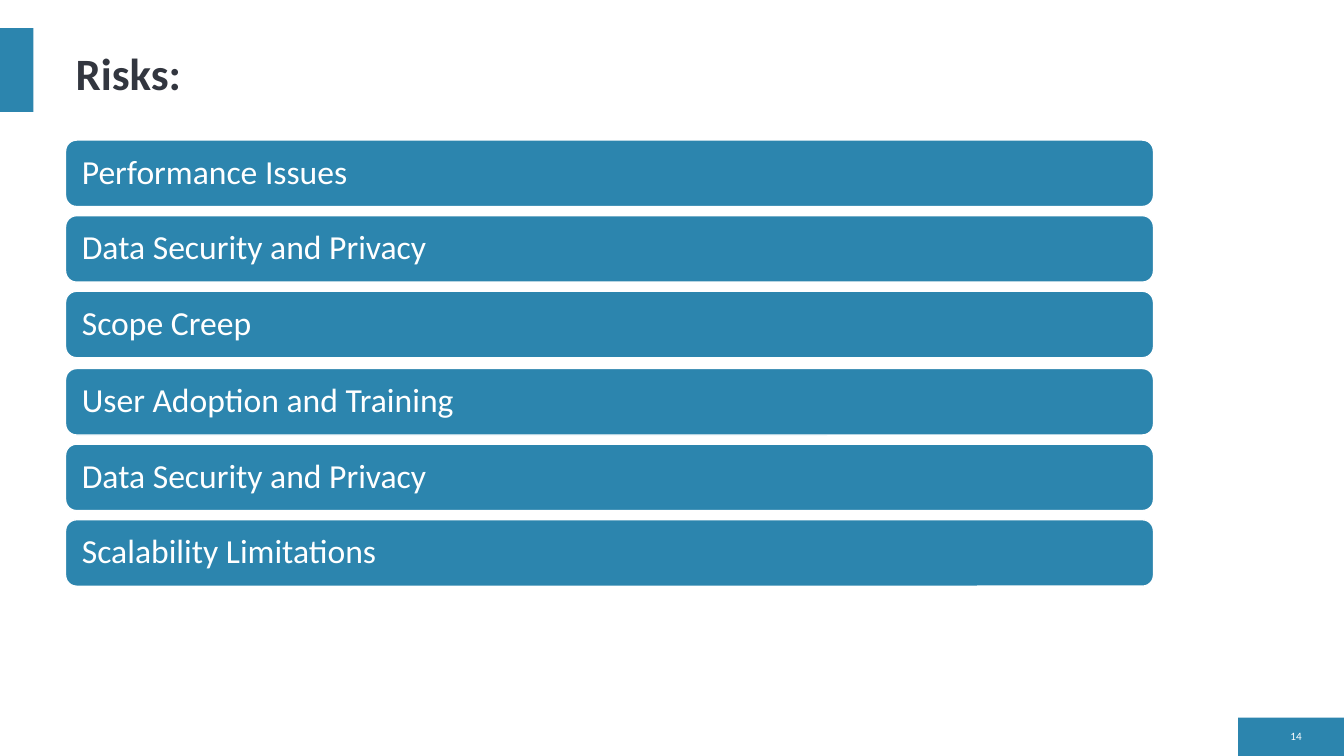
from dataclasses import dataclass

from pptx import Presentation
from pptx import util as u
from pptx.dml.color import RGBColor
from pptx.enum import shapes, text

COLORS = {"blue": "2C85AE", "ink": "32363F", "white": "FFFFFF"}
FONT = "Calibri"
SLIDE_W, SLIDE_H = u.Inches(13.33), u.Inches(7.5)
RISK_GROUPS = (
    ("Performance Issues", "Data Security and Privacy", "Scope Creep"),
    ("User Adoption and Training", "Data Security and Privacy", "Scalability Limitations"),
)
GROUP_TOPS = (18.53, 48.75)
BAR_PITCH = 10


@dataclass(frozen=True)
class Box:
    """A rectangle in percent of the slide's width and height."""
    left: float
    top: float
    width: float
    height: float

    def emu(self) -> tuple[int, int, int, int]:
        return (int(SLIDE_W * self.left / 100), int(SLIDE_H * self.top / 100),
                int(SLIDE_W * self.width / 100), int(SLIDE_H * self.height / 100))


@dataclass(frozen=True)
class TextStyle:
    size: float
    color: str
    bold: bool = False
    align: text.PP_ALIGN = text.PP_ALIGN.LEFT
    anchor: text.MSO_ANCHOR = text.MSO_ANCHOR.MIDDLE


TITLE = TextStyle(32, "ink", bold=True, anchor=text.MSO_ANCHOR.BOTTOM)
RISK = TextStyle(24, "white")
NUMBER = TextStyle(8, "white", align=text.PP_ALIGN.RIGHT)


def rgb(name: str) -> RGBColor:
    return RGBColor.from_string(COLORS[name])


def write(sp, words: str, style: TextStyle) -> None:
    tf = sp.text_frame
    tf.text = words
    tf.word_wrap = True
    tf.auto_size = text.MSO_AUTO_SIZE.NONE
    tf.vertical_anchor = style.anchor
    p = tf.paragraphs[0]
    p.alignment = style.align
    p.line_spacing = 0.9
    font = p.runs[0].font
    font.name, font.size, font.bold = FONT, u.Pt(style.size), style.bold
    font.color.rgb = rgb(style.color)


def add_block(slide, box: Box, kind=shapes.MSO_SHAPE.RECTANGLE):
    sp = slide.shapes.add_shape(kind, *box.emu())
    sp.shadow.inherit = False
    sp.fill.solid()
    sp.fill.fore_color.rgb = rgb("blue")
    sp.line.fill.background()
    return sp


def add_risk_bar(slide, words: str, top: float) -> None:
    sp = add_block(slide, Box(4.88, top, 80.95, 8.8), shapes.MSO_SHAPE.ROUNDED_RECTANGLE)
    sp.line.color.rgb = rgb("white")
    sp.line.width = u.Pt(1)
    write(sp, words, RISK)
    sp.text_frame.margin_left = u.Inches(0.13)


def main() -> None:
    prs = Presentation()
    prs.slide_width, prs.slide_height = SLIDE_W, SLIDE_H
    slide = prs.slides.add_slide(prs.slide_layouts[5])

    add_block(slide, Box(92.12, 94.93, 7.88, 5.07))
    add_block(slide, Box(0, 3.73, 2.48, 11.07))

    title = slide.shapes.title
    title.left, title.top, title.width, title.height = Box(4.88, 5.47, 34.73, 8.4).emu()
    write(title, "Risks:", TITLE)

    number = slide.shapes.add_textbox(*Box(94.52, 96, 3.08, 3.07).emu())
    write(number, "14", NUMBER)

    for group_top, risks in zip(GROUP_TOPS, RISK_GROUPS):
        for row, risk in enumerate(risks):
            add_risk_bar(slide, risk, group_top + row * BAR_PITCH)

    prs.save("out.pptx")


if __name__ == "__main__":
    main()
